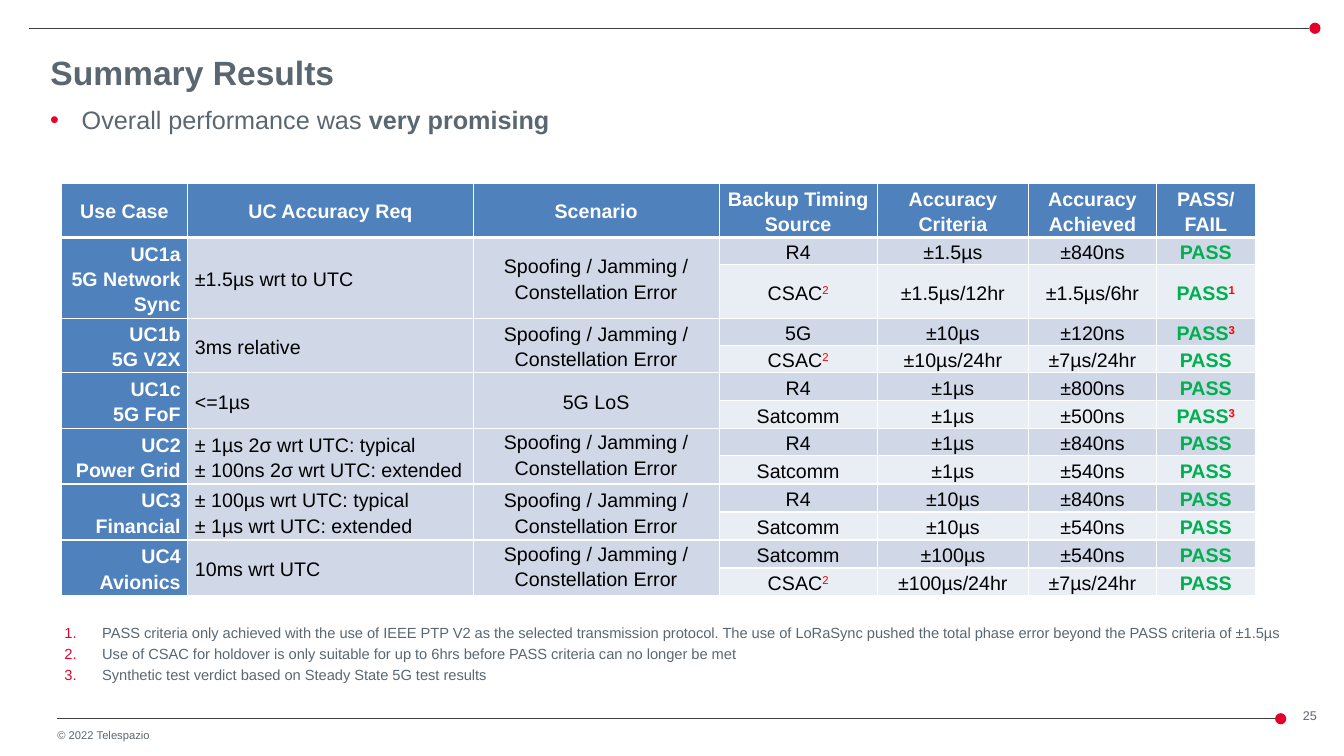
from dataclasses import dataclass

from lxml import etree
from pptx import Presentation
from pptx.dml.color import RGBColor
from pptx.enum.shapes import MSO_CONNECTOR, MSO_SHAPE
from pptx.enum.text import MSO_ANCHOR, PP_ALIGN
from pptx.oxml.ns import qn
from pptx.util import Pt

LEFT, MID, RIGHT = PP_ALIGN.LEFT, PP_ALIGN.CENTER, PP_ALIGN.RIGHT
TOP, CENTRE, BASE = MSO_ANCHOR.TOP, MSO_ANCHOR.MIDDLE, MSO_ANCHOR.BOTTOM
OVAL, LINE = MSO_SHAPE.OVAL, MSO_CONNECTOR.STRAIGHT


@dataclass(frozen=True)
class Theme:
    font: str = "Arial"
    grey: str = "5B6770"
    rule: str = "3D4144"
    dot: str = "E4002B"
    mark: str = "EA002A"
    head: str = "4F81BD"
    band: str = "D0D8E8"
    pale: str = "E9EDF4"
    white: str = "FFFFFF"
    black: str = "000000"
    ok: str = "00B050"
    ref: str = "FF0000"
    title: float = 24
    lead: float = 18
    cell: float = 14
    note: float = 10.5
    page: float = 9
    foot: float = 8


T = Theme()
COLS = [90.7, 203.8, 175.7, 113, 108, 91.4, 70.6]
ROWS = [38, 18.2, 36.2, 18.2, 18.2, 20, 20, 18.2, 20.2, 20, 20, 20, 20]
HEADS = ["Use Case", "UC Accuracy Req", "Scenario", "Backup Timing Source",
         "Accuracy Criteria", "Accuracy Achieved", "PASS/ FAIL"]
ERRORS = "Spoofing / Jamming / Constellation Error"
# Each case: name, requirement, scenario, scenario anchor, two test rows.
# Text after ^ is a raised footnote mark.
CASES = [
    ("UC1a\n5G Network Sync", "±1.5µs wrt to UTC", ERRORS, CENTRE,
     [("R4", "±1.5µs", "±840ns", "PASS"),
      ("CSAC^2", "±1.5µs/12hr", "±1.5µs/6hr", "PASS^1")]),
    ("UC1b\n5G V2X", "3ms relative", ERRORS, CENTRE,
     [("5G", "±10µs", "±120ns", "PASS^3"),
      ("CSAC^2", "±10µs/24hr", "±7µs/24hr", "PASS")]),
    ("UC1c\n5G FoF", "<=1µs", "5G LoS", CENTRE,
     [("R4", "±1µs", "±800ns", "PASS"),
      ("Satcomm", "±1µs", "±500ns", "PASS^3")]),
    ("UC2\nPower Grid",
     "± 1µs 2σ wrt UTC: typical\n± 100ns 2σ wrt UTC: extended", ERRORS, TOP,
     [("R4", "±1µs", "±840ns", "PASS"),
      ("Satcomm", "±1µs", "±540ns", "PASS")]),
    ("UC3\nFinancial",
     "± 100µs wrt UTC: typical\n± 1µs wrt UTC: extended", ERRORS, CENTRE,
     [("R4", "±10µs", "±840ns", "PASS"),
      ("Satcomm", "±10µs", "±540ns", "PASS")]),
    ("UC4\nAvionics", "10ms wrt UTC", ERRORS, TOP,
     [("Satcomm", "±100µs", "±540ns", "PASS"),
      ("CSAC^2", "±100µs/24hr", "±7µs/24hr", "PASS")]),
]
NOTES = [
    "PASS criteria only achieved with the use of IEEE PTP V2 as the selected "
    "transmission protocol. The use of LoRaSync pushed the total phase error "
    "beyond the PASS criteria of ±1.5µs",
    "Use of CSAC for holdover is only suitable for up to 6hrs before PASS "
    "criteria can no longer be met",
    "Synthetic test verdict based on Steady State 5G test results",
]


def rgb(hue):
    return RGBColor.from_string(hue)


def style(run, size, hue, bold=False):
    font = run.font
    font.name, font.size, font.bold = T.font, Pt(size), bold
    font.color.rgb = rgb(hue)


def add_text(slide, box, text, size, align=LEFT, anchor=TOP, pad=(0, 0)):
    """Add a grey text box; pad is the side and the top inset."""
    frame = slide.shapes.add_textbox(*map(Pt, box)).text_frame
    frame.word_wrap, frame.vertical_anchor = True, anchor
    frame.margin_left = frame.margin_right = Pt(pad[0])
    frame.margin_top = frame.margin_bottom = Pt(pad[1])
    frame.text = text
    for para in frame.paragraphs:
        para.alignment = align
        for run in para.runs:
            style(run, size, T.grey)
    return frame


def add_mark(para, indent, kind, **attrs):
    """Give a paragraph a hanging red bullet or number."""
    props = para._p.get_or_add_pPr()
    props.set("marL", str(Pt(indent)))
    props.set("indent", str(-Pt(indent)))
    tint = etree.SubElement(props, qn("a:buClr"))
    etree.SubElement(tint, qn("a:srgbClr"), val=T.mark)
    etree.SubElement(props, qn("a:buFont"), typeface=T.font)
    etree.SubElement(props, qn(kind), **attrs)


def add_rule(slide, left, right, y):
    """Draw a thin line that ends in a red dot."""
    line = slide.shapes.add_connector(LINE, Pt(left), Pt(y), Pt(right), Pt(y))
    line.line.color.rgb, line.line.width = rgb(T.rule), Pt(0.75)
    etree.SubElement(line._element.spPr, qn("a:effectLst"))
    dot = slide.shapes.add_shape(OVAL, Pt(right), Pt(y - 4), Pt(8), Pt(8))
    dot.shadow.inherit = False
    dot.fill.solid()
    dot.fill.fore_color.rgb = rgb(T.dot)
    dot.line.fill.background()


def add_edges(cell, base):
    """Draw white borders; base is the width of the lower one."""
    props = cell._tc.get_or_add_tcPr()
    for n, (tag, width) in enumerate(
            [("a:lnL", 1), ("a:lnR", 1), ("a:lnT", 1), ("a:lnB", base)]):
        edge = etree.Element(qn(tag), w=str(Pt(width)))
        fill = etree.SubElement(edge, qn("a:solidFill"))
        etree.SubElement(fill, qn("a:srgbClr"), val=T.white)
        props.insert(n, edge)


def set_cell(cell, text, fill, hue=T.black, bold=False, align=MID,
             anchor=CENTRE, base=1):
    cell.fill.solid()
    cell.fill.fore_color.rgb = rgb(fill)
    add_edges(cell, base)
    cell.margin_left = cell.margin_right = Pt(5.1)
    cell.margin_top = cell.margin_bottom = 0
    cell.vertical_anchor = anchor
    body, _, ref = text.partition("^")
    cell.text_frame.text = body
    for para in cell.text_frame.paragraphs:
        para.alignment, para.line_spacing = align, 1.15
        for run in para.runs:
            style(run, T.cell, hue, bold)
    if ref:
        run = para.add_run()
        run.text = ref
        style(run, T.cell, T.ref, bold)
        run.font._element.set("baseline", "30000")


def add_results(slide):
    table = slide.shapes.add_table(
        len(ROWS), len(COLS), Pt(43.5), Pt(131),
        Pt(sum(COLS)), Pt(sum(ROWS))).table
    for col, width in zip(table.columns, COLS):
        col.width = Pt(width)
    for row, height in zip(table.rows, ROWS):
        row.height = Pt(height)
    for c, head in enumerate(HEADS):
        set_cell(table.cell(0, c), head, T.head, T.white, True, base=3)
    for n, (name, need, scene, anchor, tests) in enumerate(CASES):
        top = 1 + 2 * n
        for c in range(3):
            table.cell(top, c).merge(table.cell(top + 1, c))
        for r, test in enumerate(tests, top):
            set_cell(table.cell(r, 0), name if r == top else "",
                     T.head, T.white, True, RIGHT)
            set_cell(table.cell(r, 1), need if r == top else "",
                     T.band, align=LEFT)
            set_cell(table.cell(r, 2), scene if r == top else "",
                     T.band, anchor=anchor)
            fill = T.band if r == top else T.pale
            for c, text in enumerate(test[:3], 3):
                set_cell(table.cell(r, c), text, fill)
            set_cell(table.cell(r, 6), test[3], fill, T.ok, True)


def set_title(slide, text):
    title = slide.shapes.title
    title.left, title.top, title.width, title.height = map(
        Pt, (28.8, 31.7, 882, 39.6))
    frame = title.text_frame
    frame.text, frame.vertical_anchor = text, CENTRE
    frame.paragraphs[0].alignment = LEFT
    style(frame.paragraphs[0].runs[0], T.title, T.grey, True)


def main():
    deck = Presentation()
    deck.slide_width, deck.slide_height = Pt(960), Pt(540)
    slide = deck.slides.add_slide(deck.slide_layouts[5])
    add_rule(slide, 20.9, 935.3, 20.2)
    add_rule(slide, 41, 910.8, 513.4)
    set_title(slide, "Summary Results")

    lead = add_text(slide, (28.8, 71.3, 867, 29), "Overall performance was ",
                    T.lead, pad=(7.2, 3.6)).paragraphs[0]
    add_mark(lead, 22.5, "a:buChar", char="•")
    run = lead.add_run()
    run.text = "very promising"
    style(run, T.lead, T.grey, True)

    add_results(slide)
    notes = add_text(slide, (38.9, 442.1, 900.7, 54), "\n".join(NOTES),
                     T.note, pad=(7.2, 3.6))
    for n, para in enumerate(notes.paragraphs):
        add_mark(para, 27, "a:buAutoNum", type="arabicPeriod")
        para.space_before = Pt(2.5 if n else 0)

    add_text(slide, (41, 520, 165.6, 9.4), "© 2022 Telespazio", T.foot)
    add_text(slide, (920.2, 504.7, 31, 11.5), "25", T.page, MID, BASE)
    deck.save("out.pptx")


if __name__ == "__main__":
    main()
